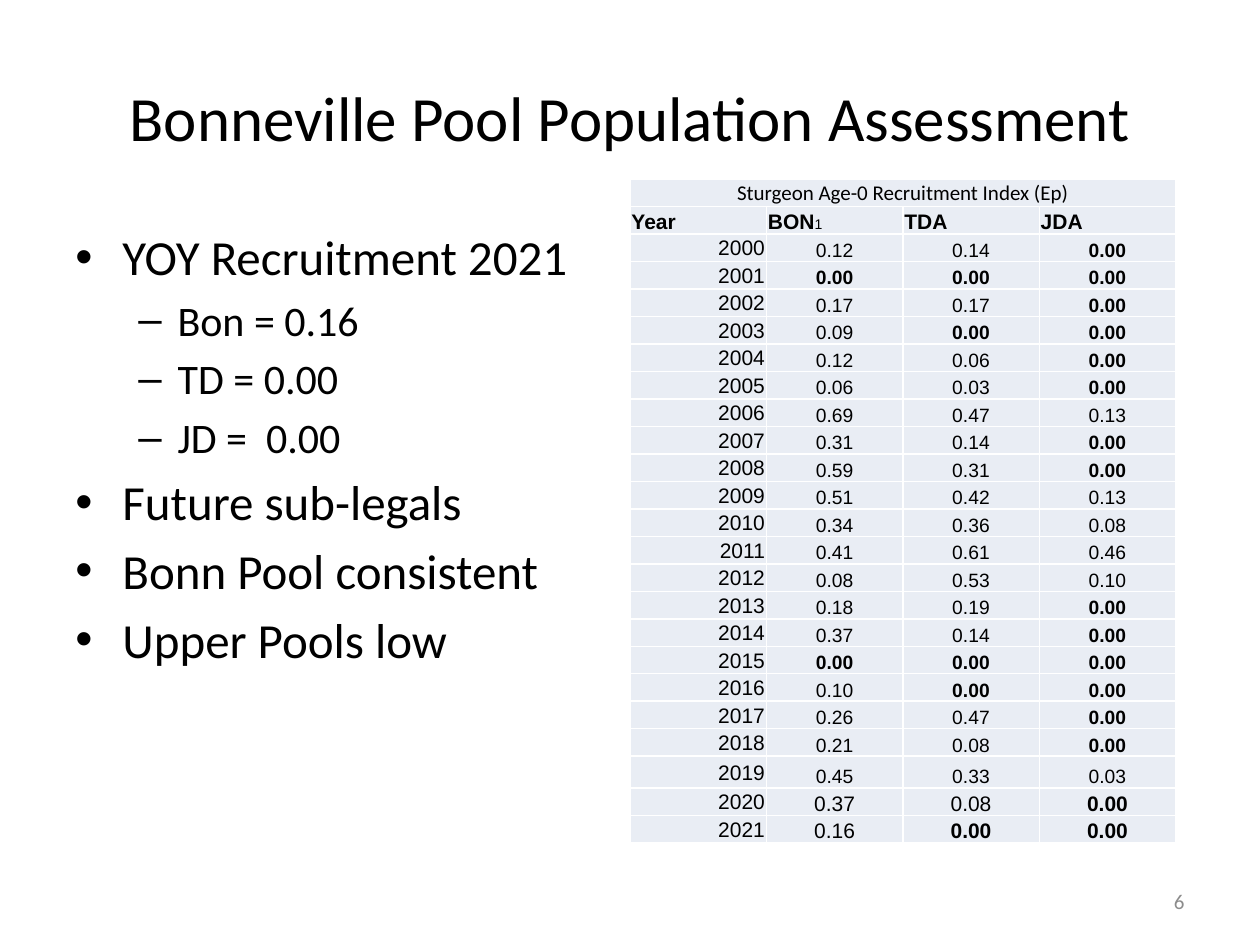
import pptx
import pptx.dml.color
import pptx.enum.text
import pptx.oxml.ns
import pptx.util
from lxml import etree

Cm = pptx.util.Cm
ALIGN = pptx.enum.text.PP_ALIGN
ANCHOR = pptx.enum.text.MSO_ANCHOR
BULLETS = {0: ("•", 28, 0.95, -0.95), 1: ("–", 24, 2.06, -0.79)}
OUTLINE = [
    (0, "YOY Recruitment 2021"),
    (1, "Bon = 0.16"),
    (1, "TD = 0.00"),
    (1, "JD =  0.00"),
    (0, "Future sub-legals"),
    (0, "Bonn Pool consistent"),
    (0, "Upper Pools low"),
]
HEADINGS = ["Year", "BON", "TDA", "JDA"]
RECRUITMENT = [
    ("2000", "0.12", "0.14", "0.00"),
    ("2001", "0.00", "0.00", "0.00"),
    ("2002", "0.17", "0.17", "0.00"),
    ("2003", "0.09", "0.00", "0.00"),
    ("2004", "0.12", "0.06", "0.00"),
    ("2005", "0.06", "0.03", "0.00"),
    ("2006", "0.69", "0.47", "0.13"),
    ("2007", "0.31", "0.14", "0.00"),
    ("2008", "0.59", "0.31", "0.00"),
    ("2009", "0.51", "0.42", "0.13"),
    ("2010", "0.34", "0.36", "0.08"),
    ("2011", "0.41", "0.61", "0.46"),
    ("2012", "0.08", "0.53", "0.10"),
    ("2013", "0.18", "0.19", "0.00"),
    ("2014", "0.37", "0.14", "0.00"),
    ("2015", "0.00", "0.00", "0.00"),
    ("2016", "0.10", "0.00", "0.00"),
    ("2017", "0.26", "0.47", "0.00"),
    ("2018", "0.21", "0.08", "0.00"),
    ("2019", "0.45", "0.33", "0.03"),
    ("2020", "0.37", "0.08", "0.00"),
    ("2021", "0.16", "0.00", "0.00"),
]


def color(value):
    """Turn a hex string into a colour."""
    return pptx.dml.color.RGBColor.from_string(value)


def add_span(para, text, size, font="Calibri", bold=False, ink="000000"):
    """Append one formatted run to a paragraph."""
    span = para.add_run()
    span.text = text
    span.font.size = pptx.util.Pt(size)
    span.font.name = font
    span.font.bold = bold
    span.font.color.rgb = color(ink)


def add_child(parent, tag, **attributes):
    """Append a DrawingML element to a parent element."""
    return etree.SubElement(parent, pptx.oxml.ns.qn(tag), attributes)


def place_title(page, left, top, width, height):
    """Move and format the title placeholder."""
    box = page.shapes.title
    box.left, box.top, box.width, box.height = left, top, width, height
    box.text_frame.vertical_anchor = ANCHOR.MIDDLE
    para = box.text_frame.paragraphs[0]
    para.alignment = ALIGN.CENTER
    add_span(para, "Bonneville Pool Population Assessment", 36)


def add_outline(page, left, top, width, height):
    """Add the two-level bullet list."""
    frame = page.shapes.add_textbox(left, top, width, height).text_frame
    frame.word_wrap = True
    for number, (level, text) in enumerate(OUTLINE):
        para = frame.add_paragraph() if number else frame.paragraphs[0]
        mark, size, margin, indent = BULLETS[level]
        para.level = level
        para.space_before = pptx.util.Pt(size * 0.2)
        properties = para._p.get_or_add_pPr()
        properties.set("marL", str(Cm(margin)))
        properties.set("indent", str(Cm(indent)))
        add_child(properties, "a:buFont", typeface="Arial")
        add_child(properties, "a:buChar", char=mark)
        add_span(para, text, size)


def format_cell(cell, anchor, align, side=0.03, top=0.03):
    """Set a cell's margins, borders and fill, and return its paragraph."""
    cell.margin_left = cell.margin_right = Cm(side)
    cell.margin_top, cell.margin_bottom = Cm(top), Cm(0)
    cell.vertical_anchor = anchor
    properties = cell._tc.get_or_add_tcPr()
    for edge in ("a:lnL", "a:lnR", "a:lnT", "a:lnB"):
        line = add_child(properties, edge, w=str(pptx.util.Pt(1)))
        add_child(add_child(line, "a:solidFill"), "a:srgbClr", val="FFFFFF")
    cell.fill.solid()
    cell.fill.fore_color.rgb = color("E9EDF4")
    para = cell.text_frame.paragraphs[0]
    para.alignment = align
    return para


def add_recruitment_table(page, left, top, width, height):
    """Add the recruitment index table, with zero values in bold."""
    count = len(RECRUITMENT) + 2
    table = page.shapes.add_table(count, len(HEADINGS), left, top, width, height).table
    tall = Cm(0.64)
    for row in table.rows:
        row.height = (height - tall) // (count - 1)
    table.rows[count - 3].height = tall

    table.cell(0, 0).merge(table.cell(0, len(HEADINGS) - 1))
    caption = format_cell(table.cell(0, 0), ANCHOR.MIDDLE, ALIGN.CENTER)
    add_span(caption, "Sturgeon Age-0 Recruitment Index (Ep)", 12)

    for column, heading in enumerate(HEADINGS):
        para = format_cell(table.cell(1, column), ANCHOR.BOTTOM, ALIGN.LEFT)
        add_span(para, heading, 12, "Arial", True)
        if heading == "BON":
            add_span(para, "1", 8, "Arial")

    for row, (year, *values) in enumerate(RECRUITMENT, 2):
        para = format_cell(table.cell(row, 0), ANCHOR.MIDDLE, ALIGN.RIGHT)
        add_span(para, year, 12, "Arial")
        size = 12 if year >= "2020" else 11
        for column, value in enumerate(values, 1):
            cell = table.cell(row, column)
            para = format_cell(cell, ANCHOR.BOTTOM, ALIGN.CENTER, 0.18, 0)
            add_span(para, value, size, "Arial", value == "0.00")


def add_page_number(page, left, top, width, height):
    """Add the page number at the lower right."""
    frame = page.shapes.add_textbox(left, top, width, height).text_frame
    frame.word_wrap = True
    frame.vertical_anchor = ANCHOR.MIDDLE
    para = frame.paragraphs[0]
    para.alignment = ALIGN.RIGHT
    add_span(para, "6", 12, ink="8C8C8C")


def main():
    """Build and save the deck."""
    deck = pptx.Presentation()
    deck.slide_width, deck.slide_height = Cm(25.4), Cm(19.05)
    page = deck.slides.add_slide(deck.slide_layouts[5])
    place_title(page, Cm(1.27), Cm(0.76), Cm(22.86), Cm(3.18))
    add_outline(page, Cm(1.27), Cm(4.45), Cm(11.23), Cm(11.23))
    add_page_number(page, Cm(18.2), Cm(17.66), Cm(5.93), Cm(1.01))
    add_recruitment_table(page, Cm(12.7), Cm(3.61), Cm(11), Cm(13.39))
    deck.save("out.pptx")


if __name__ == "__main__":
    main()
